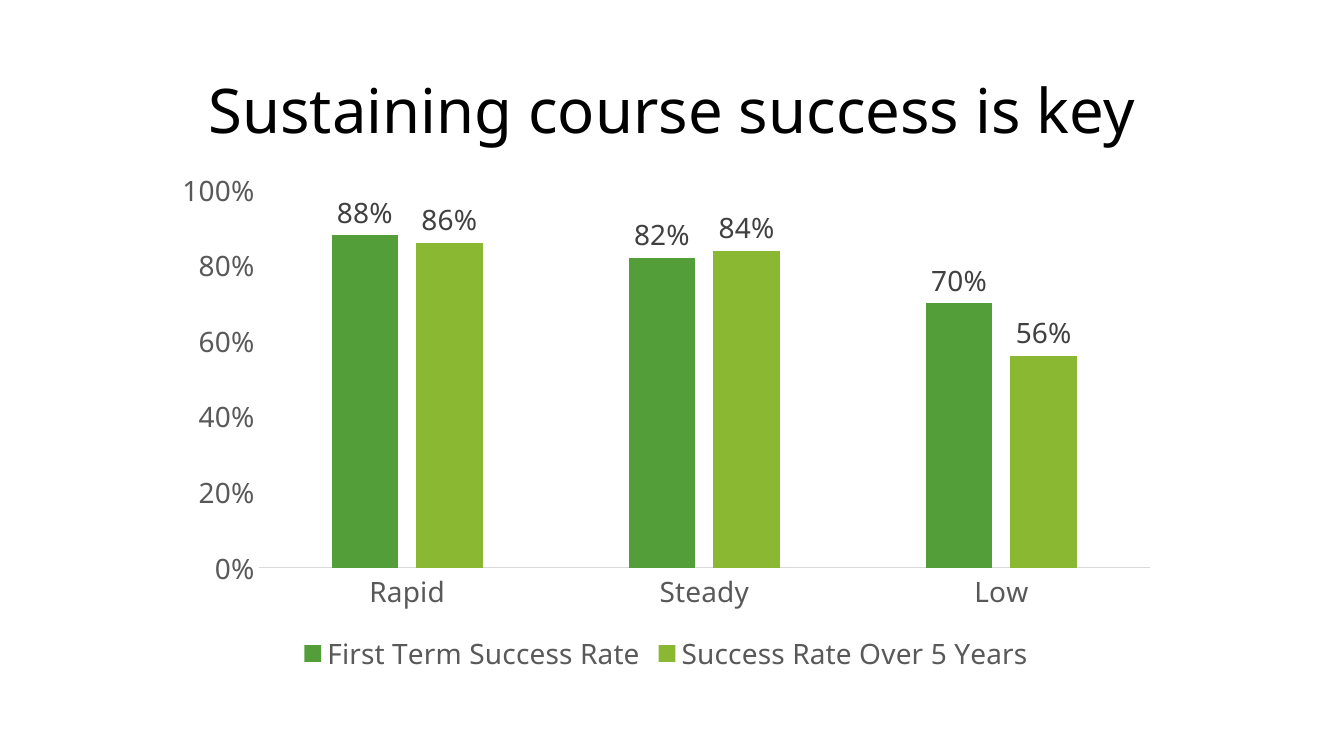
import pptx
import pptx.util
import pptx.chart.data
import pptx.dml.color
import pptx.enum.chart
import pptx.enum.text

Cm = pptx.util.Cm
Pt = pptx.util.Pt
RGBColor = pptx.dml.color.RGBColor

FACE = "Noto Sans"
BLACK = RGBColor(0x00, 0x00, 0x00)
GREY = RGBColor(0x59, 0x59, 0x59)
DARK = RGBColor(0x40, 0x40, 0x40)
PALE = RGBColor(0xD9, 0xD9, 0xD9)
GREEN = RGBColor(0x54, 0x9E, 0x39)
LIME = RGBColor(0x8A, 0xB8, 0x33)

GROUPS = ["Rapid", "Steady", "Low"]
RATES = [
    ("First Term Success Rate", [0.88, 0.82, 0.7], GREEN),
    ("Success Rate Over 5 Years", [0.86, 0.84, 0.56], LIME),
]


def set_font(font, size, color):
    font.name = FACE
    font.size = Pt(size)
    font.bold = False
    font.color.rgb = color


def add_title(slide, text):
    box = slide.shapes.add_textbox(Cm(2.33), Cm(1.01), Cm(29.21), Cm(3.68))
    frame = box.text_frame
    frame.text = text
    frame.word_wrap = True
    frame.vertical_anchor = pptx.enum.text.MSO_ANCHOR.MIDDLE
    line = frame.paragraphs[0]
    line.alignment = pptx.enum.text.PP_ALIGN.CENTER
    line.line_spacing = 0.9
    set_font(line.runs[0].font, 44, BLACK)


def style_axis(axis):
    axis.has_major_gridlines = False
    axis.major_tick_mark = pptx.enum.chart.XL_TICK_MARK.NONE
    axis.minor_tick_mark = pptx.enum.chart.XL_TICK_MARK.NONE
    set_font(axis.tick_labels.font, 20, GREY)


def style_bars(bars, color):
    """Fill one series and label its bars with percentages."""
    bars.format.fill.solid()
    bars.format.fill.fore_color.rgb = color
    bars.invert_if_negative = False
    labels = bars.data_labels
    labels.show_value = True
    labels.position = pptx.enum.chart.XL_LABEL_POSITION.OUTSIDE_END
    labels.number_format = "0%"
    labels.number_format_is_linked = False
    set_font(labels.font, 20, DARK)


def add_rates(slide):
    """Add the column chart of success rates."""
    data = pptx.chart.data.CategoryChartData(number_format="0%")
    data.categories = GROUPS
    for name, values, _ in RATES:
        data.add_series(name, values)
    chart = slide.shapes.add_chart(
        pptx.enum.chart.XL_CHART_TYPE.COLUMN_CLUSTERED,
        Cm(4.09), Cm(4.04), Cm(25.4), Cm(13.06), data).chart
    set_font(chart.font, 20, BLACK)
    chart.has_title = False

    plot = chart.plots[0]
    plot.gap_width = 219
    plot.overlap = -27
    plot.vary_by_categories = False
    for bars, (_, _, color) in zip(plot.series, RATES):
        style_bars(bars, color)

    base = chart.category_axis
    style_axis(base)
    base.format.line.color.rgb = PALE
    base.format.line.width = Pt(0.75)

    scale = chart.value_axis
    style_axis(scale)
    scale.minimum_scale = 0
    scale.maximum_scale = 1
    scale.major_unit = 0.2
    scale.format.line.fill.background()
    scale.tick_labels.number_format = "0%"
    scale.tick_labels.number_format_is_linked = False

    chart.has_legend = True
    chart.legend.position = pptx.enum.chart.XL_LEGEND_POSITION.BOTTOM
    chart.legend.include_in_layout = False
    set_font(chart.legend.font, 20, GREY)


def main():
    deck = pptx.Presentation()
    deck.slide_width = Cm(33.87)
    deck.slide_height = Cm(19.05)
    slide = deck.slides.add_slide(deck.slide_layouts[6])
    add_title(slide, "Sustaining course success is key")
    add_rates(slide)
    deck.save("out.pptx")


if __name__ == "__main__":
    main()
